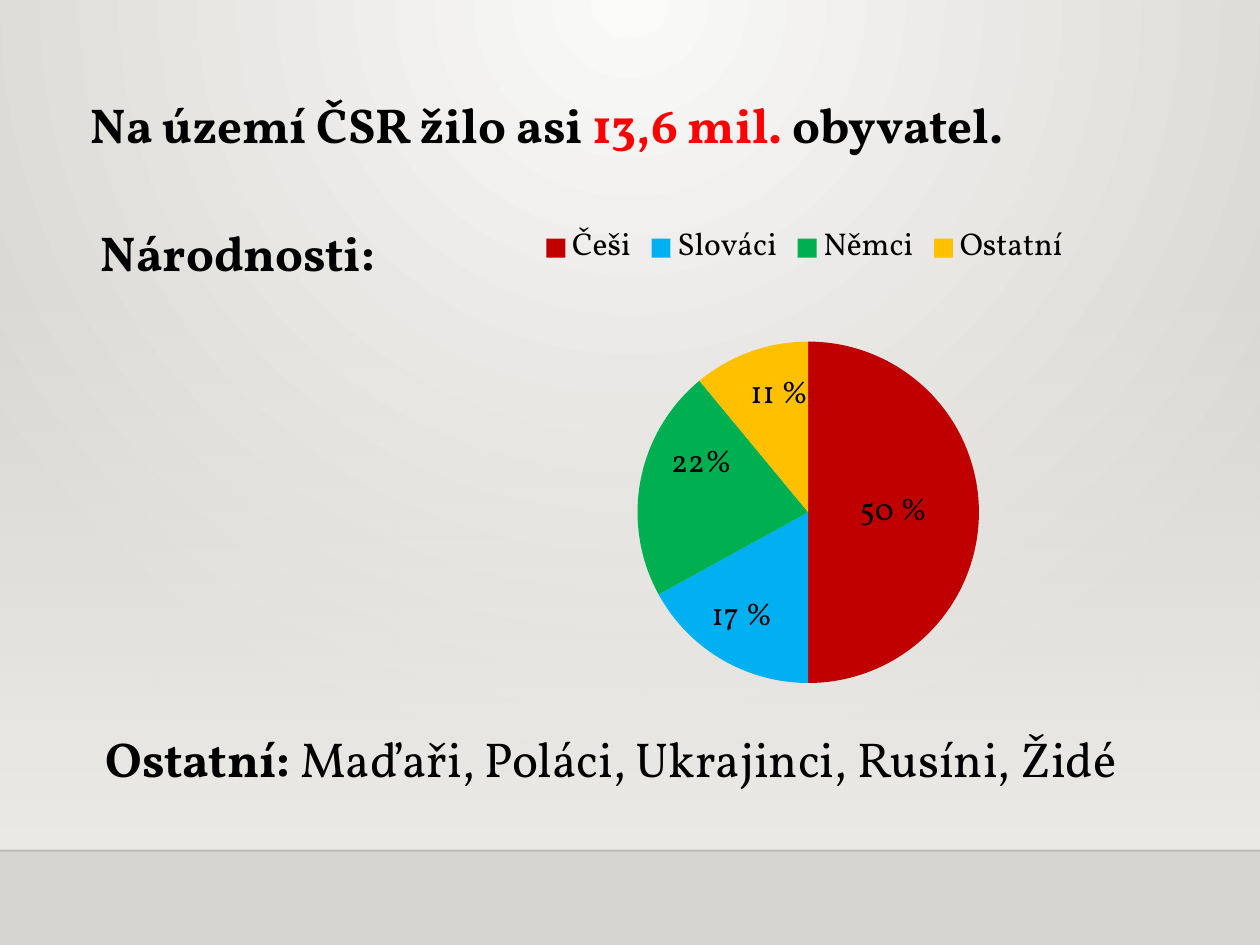
from lxml.etree import SubElement
from pptx import Presentation
from pptx.chart.data import CategoryChartData
from pptx.dml.color import RGBColor
from pptx.enum.chart import XL_CHART_TYPE, XL_LABEL_POSITION, XL_LEGEND_POSITION
from pptx.enum.shapes import MSO_CONNECTOR, MSO_SHAPE
from pptx.enum.text import MSO_ANCHOR, MSO_AUTO_SIZE, PP_ALIGN
from pptx.oxml import parse_xml
from pptx.oxml.ns import nsdecls, qn
from pptx.util import Pt

FONT = "Vollkorn"
COLORS = {
    "text": "000000", "accent": "FF0000", "rule": "000001",
    "center": "FAFAF9", "edge": "D7D5D2", "veil": "EDEBE7",
    "Češi": "C00000", "Slováci": "00B0F0", "Němci": "00B050", "Ostatní": "FFC000",
}
SHARES = [
    ("Češi", 50, "50 %", (0, 0)),
    ("Slováci", 17, "17 %", (-0.03, 0.06)),
    ("Němci", 22, "22%", (-0.03, -0.06)),
    ("Ostatní", 11, "11 %", (0, -0.07)),
]


def rgb(name):
    """Return the named colour."""
    return RGBColor.from_string(COLORS[name])


def gradient(start, end, start_alpha, shade):
    """Return a two-stop gradient fill element."""
    return parse_xml(
        f'<a:gradFill {nsdecls("a")} rotWithShape="1"><a:gsLst>'
        f'<a:gs pos="0"><a:srgbClr val="{COLORS[start]}"><a:alpha val="{start_alpha}"/></a:srgbClr></a:gs>'
        f'<a:gs pos="100000"><a:srgbClr val="{COLORS[end]}"/></a:gs>'
        f'</a:gsLst>{shade}</a:gradFill>')


def swap_fill(parent, fill):
    """Replace the solid fill of an element by another fill."""
    parent.replace(parent.find(qn("a:solidFill")), fill)


def style(font, size, color="text", bold=False):
    """Format a font."""
    font.name, font.size, font.bold = FONT, Pt(size), bold
    font.color.rgb = rgb(color)


def add_backdrop(s, width, height):
    """Paint the background, the veil and the rule beneath it."""
    s.background.fill.solid()
    swap_fill(s.element.find(".//" + qn("p:bgPr")), gradient(
        "center", "edge", 100000,
        '<a:path path="circle"><a:fillToRect l="43000" r="43000" b="100000"/></a:path>'))

    top, floor = 158.4, height - 54
    veil = s.shapes.add_shape(MSO_SHAPE.RECTANGLE, 0, Pt(top), Pt(width), Pt(floor - top))
    veil.shadow.inherit = False
    veil.line.fill.background()
    veil.fill.solid()
    swap_fill(veil.element.spPr, gradient("veil", "veil", 0, '<a:lin ang="5400000" scaled="0"/>'))

    rule = s.shapes.add_connector(MSO_CONNECTOR.STRAIGHT, 0, Pt(floor), Pt(width), Pt(floor))
    rule.line.width = Pt(1)
    rule.line.color.rgb = rgb("rule")
    color = rule.element.spPr.find(".//" + qn("a:srgbClr"))
    SubElement(color, qn("a:alpha"), val="20000")
    SubElement(rule.element.spPr, qn("a:effectLst"))


def fill_text(sp, box, runs):
    """Place a text shape and write its (text, colour, bold) runs."""
    sp.left, sp.top, sp.width, sp.height = (Pt(v) for v in box)
    tf = sp.text_frame
    tf.word_wrap = True
    tf.auto_size = MSO_AUTO_SIZE.NONE
    tf.vertical_anchor = MSO_ANCHOR.TOP
    p = tf.paragraphs[0]
    p.alignment = PP_ALIGN.LEFT
    for text, color, bold in runs:
        r = p.add_run()
        r.text = text
        style(r.font, 28, color, bold)


def add_text(s, box, runs):
    """Add a text box with the given runs."""
    fill_text(s.shapes.add_textbox(0, 0, 0, 0), box, runs)


def layout(x, y, w=None, h=None, inner=False, edge=True):
    """Return a manual chart layout in fractions of the chart."""
    target = '<c:layoutTarget val="inner"/>' if inner else ""
    modes = '<c:xMode val="edge"/><c:yMode val="edge"/>' if edge else ""
    values = zip("xywh", (x, y, w, h))
    sizes = "".join(f'<c:{k} val="{v}"/>' for k, v in values if v is not None)
    return parse_xml(f'<c:layout {nsdecls("c")}><c:manualLayout>'
                     f'{target}{modes}{sizes}</c:manualLayout></c:layout>')


def set_layout(parent, element, after=None):
    """Put a layout into a chart part, after a given child or first."""
    old = parent.find(qn("c:layout"))
    if old is not None:
        parent.remove(old)
    if after is None:
        parent.insert(0, element)
    else:
        parent.find(qn(after)).addnext(element)


def add_pie(s, box):
    """Add the pie chart of nationalities."""
    data = CategoryChartData()
    data.categories = [name for name, *_ in SHARES]
    data.add_series("Series 1", [value for _, value, *_ in SHARES])
    chart = s.shapes.add_chart(XL_CHART_TYPE.PIE, *(Pt(v) for v in box), data).chart
    style(chart.font, 18)
    chart.has_title = False
    chart.has_legend = True
    chart.legend.position = XL_LEGEND_POSITION.TOP
    chart.legend.include_in_layout = False

    plot = chart.plots[0]
    plot.vary_by_categories = True
    series = plot.series[0]
    labels = series.data_labels
    labels.show_percentage = True
    labels.show_value = False
    labels.position = XL_LABEL_POSITION.CENTER
    for i, (name, _, text, shift) in enumerate(SHARES):
        point = series.points[i]
        point.format.fill.solid()
        point.format.fill.fore_color.rgb = rgb(name)
        label = point.data_label
        label.text_frame.text = text
        style(label.text_frame.paragraphs[0].runs[0].font, 18)
        label.position = XL_LABEL_POSITION.CENTER
        if any(shift):
            set_layout(labels._element.findall(qn("c:dLbl"))[i],
                       layout(*shift, edge=False), "c:idx")

    root = chart.element
    set_layout(root.find(".//" + qn("c:plotArea")), layout(0.28, 0.25, 0.45, 0.65, inner=True))


def build_slide(prs, width, height):
    """Build the population slide."""
    s = prs.slides.add_slide(prs.slide_layouts[5])
    title = s.shapes.title
    add_backdrop(s, width, height)
    s.shapes._spTree.append(title.element)
    fill_text(title, (44.6, 50.4, 618.5, 108.7), [
        ("Na území ČSR žilo asi ", "text", True),
        ("13,6 mil. ", "accent", True),
        ("obyvatel.", "text", True)])
    add_text(s, (50.4, 123.8, 618.5, 108.7), [("Národnosti:", "text", True)])
    add_pie(s, (242.6, 120.2, 434.2, 300.2))
    add_text(s, (53.3, 412.6, 623.5, 108.7), [
        ("Ostatní: ", "text", True),
        ("Maďaři, Poláci, Ukrajinci, Rusíni, Židé", "text", False)])


def main():
    """Create the presentation and save it."""
    width, height = 720, 540
    prs = Presentation()
    prs.slide_width, prs.slide_height = Pt(width), Pt(height)
    build_slide(prs, width, height)
    prs.save("out.pptx")


if __name__ == "__main__":
    main()
